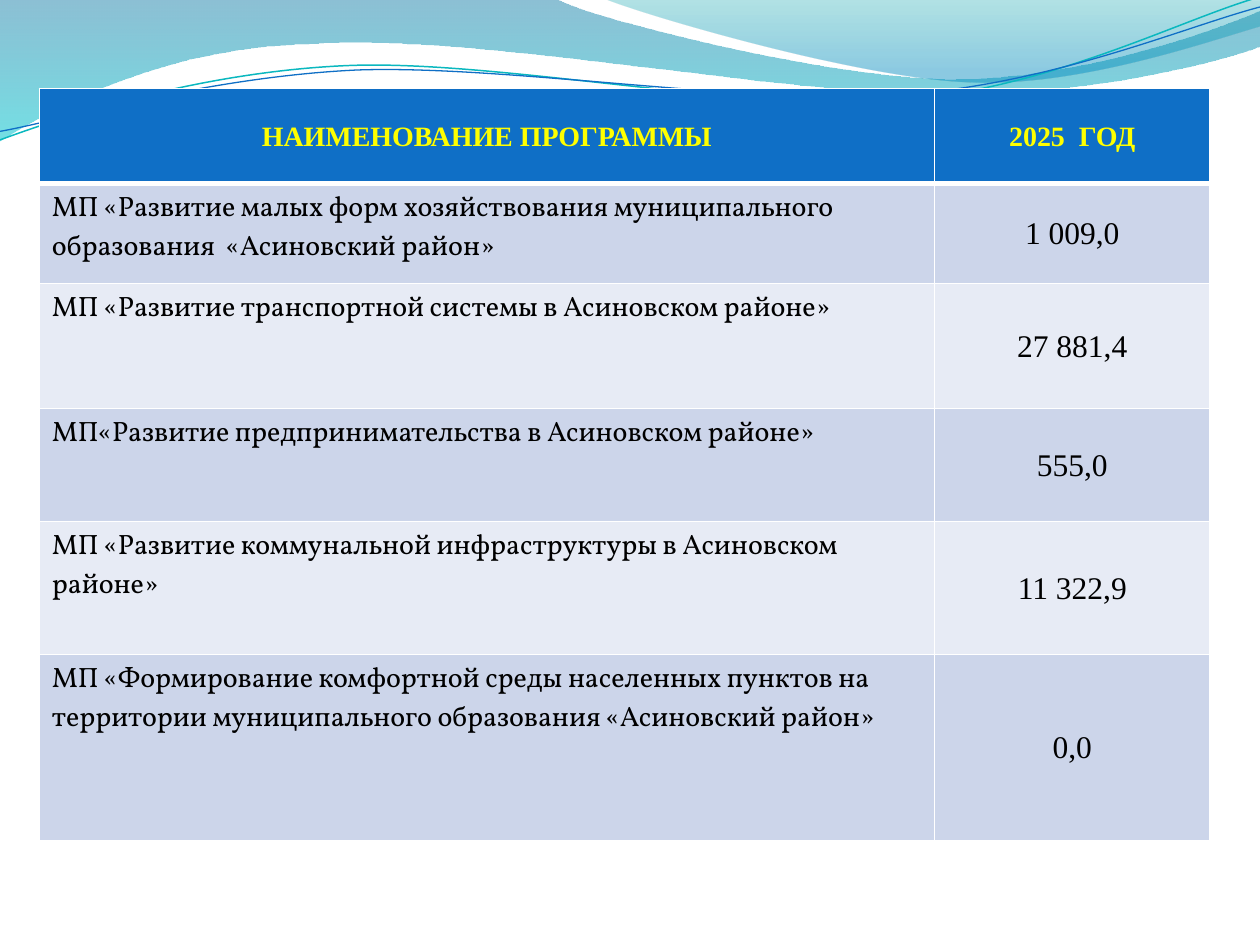
from lxml import etree
from pptx import Presentation
from pptx.dml.color import RGBColor
from pptx.enum.text import MSO_ANCHOR, PP_ALIGN
from pptx.oxml.ns import qn
from pptx.util import Pt

CENTER, LEFT = PP_ALIGN.CENTER, PP_ALIGN.LEFT
MIDDLE, TOP = MSO_ANCHOR.MIDDLE, MSO_ANCHOR.TOP

HEADER = ("НАИМЕНОВАНИЕ ПРОГРАММЫ", "2025  ГОД")
PROGRAMS = [
    ("МП «Развитие малых форм хозяйствования муниципального образования  «Асиновский район»", "1 009,0"),
    ("МП «Развитие транспортной системы в Асиновском районе»", "27 881,4"),
    ("МП«Развитие предпринимательства в Асиновском районе»", "555,0"),
    ("МП «Развитие коммунальной инфраструктуры в Асиновском районе»", "11 322,9"),
    ("МП «Формирование комфортной среды населенных пунктов на территории "
     "муниципального образования «Асиновский район»", "0,0"),
]
COLUMN_WIDTHS = (511.5, 157.5)
ROW_HEIGHTS = (54.5, 57, 71.5, 64.5, 76, 106.5)
TABLE_LEFT, TABLE_TOP = 22.5, 50.5

COLORS = {
    "header": "0F6FC6", "header_text": "FFFF00", "text": "000000", "border": "FFFFFF",
    "odd_row": "CCD5EA", "even_row": "E7EBF5",
    "band_top": "0074A1", "band_bottom": "00C6CF",
    "fan_top": "00A1A9", "fan_bottom": "008BBF",
    "teal_line": "0AB8BF", "blue_line": "0F6FC6",
}

WAVES = [
    {"start": (0, 0),
     "segments": [[(317, -1)],
                  [(343, 12), (478, 45), (546, 45)],
                  [(614, 45), (690, 19), (720, 6)],
                  [(721, 26)],
                  [(708, 32), (626, 55), (537, 54)],
                  [(448, 54), (275, 20), (185, 24.5)],
                  [(93, 26), (33, 60), (-1, 81)],
                  [(0, 0)]],
     "stops": [(0, "band_top", 45), (1, "band_bottom", 55)]},
    {"start": (345, -1),
     "segments": [[(366, 8), (491, 45), (554, 47)],
                  [(616, 50), (692, 23), (720, 15)],
                  [(720, 0)],
                  [(345, -1)]],
     "stops": [(0, "fan_top", 30), (0.8, "fan_bottom", 45)]},
    {"start": (-1.4, 63),
     "segments": [[(34, 51.7), (114.3, 29.4), (199.4, 29.9)],
                  [(284.4, 30.5), (425.9, 67.2), (512.1, 64.7)],
                  [(599.3, 62.3), (676.1, 25.9), (720.6, 15.5)]],
     "line": ("teal_line", 0.85)},
    {"start": (-1.1, 58.1),
     "segments": [[(33.1, 53.7), (118.2, 32.6), (204.3, 32.7)],
                  [(290.3, 33.7), (429.1, 63.8), (515.3, 61.4)],
                  [(601.5, 59.4), (678.9, 30), (721.4, 21)]],
     "line": ("blue_line", 0.75)},
]
LINE_ROTATION = 357.3


def color(name):
    return RGBColor.from_string(COLORS[name])


def bend_segments(shape, segments):
    lines = iter(list(shape._element.spPr.iter(qn("a:lnTo"))))
    for segment in segments:
        first, *others = [next(lines) for _ in segment]
        if others:
            curve = etree.Element(qn("a:cubicBezTo"))
            first.addprevious(curve)
            for line in (first, *others):
                curve.append(line[0])
                line.getparent().remove(line)


def add_wave(slide, wave):
    points = [wave["start"], *(point for segment in wave["segments"] for point in segment)]
    points = [(Pt(x), Pt(y)) for x, y in points]
    builder = slide.shapes.build_freeform(*points[0])
    builder.add_line_segments(points[1:], close="stops" in wave)
    shape = builder.convert_to_shape()
    bend_segments(shape, wave["segments"])
    shape.shadow.inherit = False
    if "line" in wave:
        name, width = wave["line"]
        shape.rotation = LINE_ROTATION
        shape.fill.background()
        shape.line.color.rgb = color(name)
        shape.line.width = Pt(width)
        return
    shape.line.fill.background()
    shape.fill.gradient()
    shape.fill.gradient_angle = 270
    for stop, (position, name, _) in zip(shape.fill.gradient_stops, wave["stops"]):
        stop.position = position
        stop.color.rgb = color(name)
    for element, (_, _, opacity) in zip(shape._element.spPr.iter(qn("a:srgbClr")), wave["stops"]):
        etree.SubElement(element, qn("a:alpha"), val=str(opacity * 1000))


def write_text(cell, text, size=16, font="Times New Roman", text_color="text",
               bold=False, align=CENTER, anchor=MIDDLE):
    cell.vertical_anchor = anchor
    paragraph = cell.text_frame.paragraphs[0]
    paragraph.alignment = align
    run = paragraph.add_run()
    run.text = text
    run.font.size = Pt(size)
    run.font.name = font
    run.font.bold = bold
    run.font.color.rgb = color(text_color)


def format_cell(cell, fill, top=1, bottom=1, tight=True):
    properties = cell._tc.get_or_add_tcPr()
    for side, width in (("L", 1), ("R", 1), ("T", top), ("B", bottom)):
        border = etree.SubElement(properties, qn(f"a:ln{side}"), w=str(Pt(width)))
        solid = etree.SubElement(border, qn("a:solidFill"))
        etree.SubElement(solid, qn("a:srgbClr"), val=COLORS["border"])
    cell.fill.solid()
    cell.fill.fore_color.rgb = color(fill)
    if tight:
        cell.margin_left = cell.margin_right = cell.margin_top = Pt(0.75)
        cell.margin_bottom = Pt(0)


def add_program_table(slide):
    table = slide.shapes.add_table(
        len(ROW_HEIGHTS), len(COLUMN_WIDTHS), Pt(TABLE_LEFT), Pt(TABLE_TOP),
        Pt(sum(COLUMN_WIDTHS)), Pt(sum(ROW_HEIGHTS))).table
    for column, width in zip(table.columns, COLUMN_WIDTHS):
        column.width = Pt(width)
    for row, height in zip(table.rows, ROW_HEIGHTS):
        row.height = Pt(height)
    for cell, text in zip(table.rows[0].cells, HEADER):
        format_cell(cell, "header", bottom=3)
        write_text(cell, text, text_color="header_text", bold=True)
    for index, (program, amount) in enumerate(PROGRAMS, start=1):
        fill = "odd_row" if index % 2 else "even_row"
        top = 3 if index == 1 else 1
        name_cell, amount_cell = table.rows[index].cells
        format_cell(name_cell, fill, top=top, tight=False)
        write_text(name_cell, program, font="Vollkorn", align=LEFT, anchor=TOP)
        format_cell(amount_cell, fill, top=top)
        write_text(amount_cell, amount, size=18)


def main():
    presentation = Presentation()
    presentation.slide_width, presentation.slide_height = Pt(720), Pt(540)
    slide = presentation.slides.add_slide(presentation.slide_layouts[6])
    for wave in WAVES:
        add_wave(slide, wave)
    add_program_table(slide)
    presentation.save("out.pptx")


if __name__ == "__main__":
    main()
